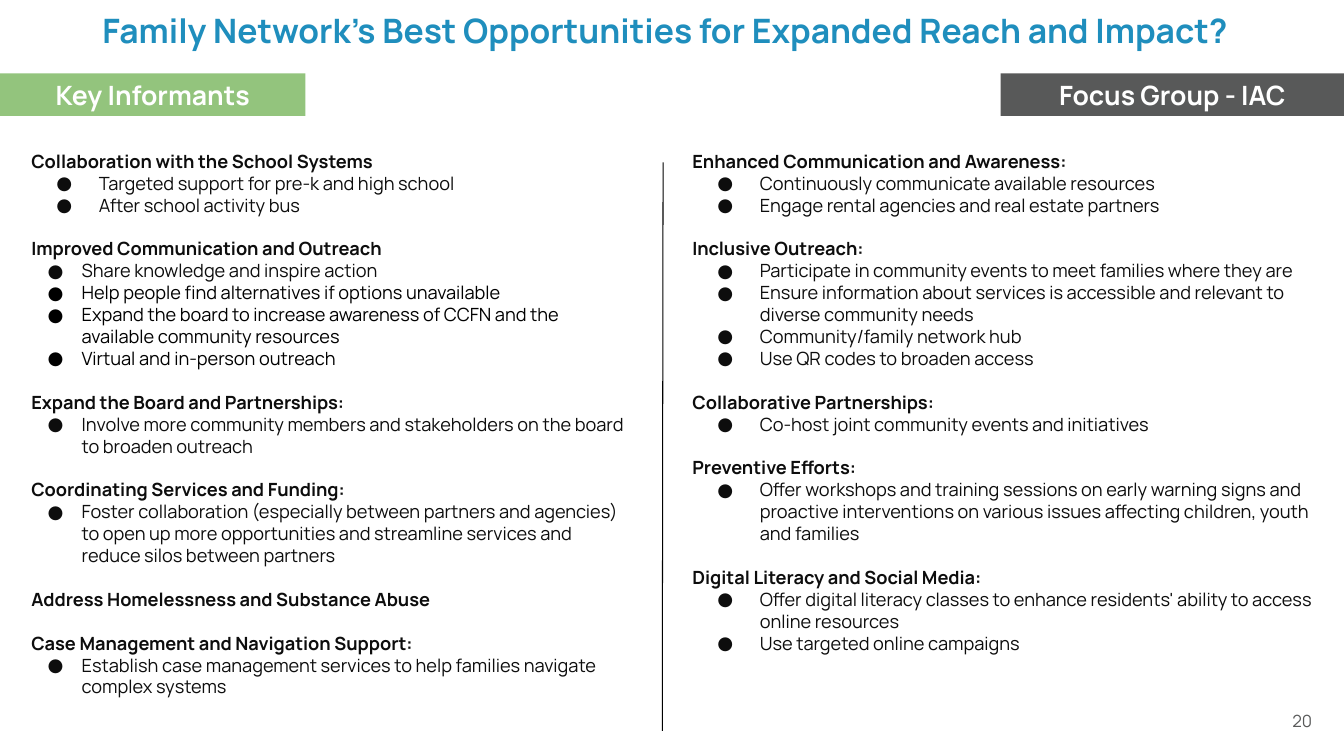
from lxml import etree
from pptx import Presentation
from pptx.dml.color import RGBColor
from pptx.enum.shapes import MSO_CONNECTOR, MSO_SHAPE
from pptx.enum.text import MSO_ANCHOR, MSO_AUTO_SIZE, PP_ALIGN
from pptx.oxml.ns import qn
from pptx.util import Cm, Pt

STRAIGHT, RECTANGLE = MSO_CONNECTOR.STRAIGHT, MSO_SHAPE.RECTANGLE
TOP, MIDDLE = MSO_ANCHOR.TOP, MSO_ANCHOR.MIDDLE
LEFT, CENTER, RIGHT = PP_ALIGN.LEFT, PP_ALIGN.CENTER, PP_ALIGN.RIGHT
NO_FIT = MSO_AUTO_SIZE.NONE

TITLE_ONLY = 5
FONT = "Manrope"
LINE_PITCH = Pt(15.65)
COLOURS = {
    "blue": "1F8EBD",
    "green": "93C47D",
    "grey": "585959",
    "white": "FFFFFF",
    "ink": "0D0D0D",
    "black": "000000",
}
BULLETS = {
    "wide": {"colour": "ink", "margin": 1.7, "hang": 1.07},
    "narrow": {"colour": "ink", "margin": 1.27, "hang": 0.86},
    "black": {"colour": "black", "margin": 1.27, "hang": 0.86},
}
KEY_INFORMANTS = [
    ("heading", "Collaboration with the School Systems"),
    ("wide", "Targeted support for pre-k and high school"),
    ("wide", "After school activity bus"),
    ("heading", "Improved Communication and Outreach"),
    ("narrow", "Share knowledge and inspire action"),
    ("black", "Help people find alternatives if options unavailable"),
    ("black", "Expand the board to increase awareness of CCFN and the "
              "available community resources"),
    ("black", "Virtual and in-person outreach"),
    ("heading", "Expand the Board and Partnerships:"),
    ("narrow", "Involve more community members and stakeholders on the board "
               "to broaden outreach"),
    ("heading", "Coordinating Services and Funding:"),
    ("narrow", "Foster collaboration (especially between partners and agencies) "
               "to open up more opportunities and streamline services and "
               "reduce silos between partners"),
    ("heading", "Address Homelessness and Substance Abuse"),
    ("heading", "Case Management and Navigation Support:"),
    ("narrow", "Establish case management services to help families navigate "
               "complex systems"),
]
FOCUS_GROUP = [
    ("heading", "Enhanced Communication and Awareness:"),
    ("wide", "Continuously communicate available resources"),
    ("wide", "Engage rental agencies and real estate partners"),
    ("heading", "Inclusive Outreach:"),
    ("wide", "Participate in community events to meet families where they are"),
    ("wide", "Ensure information about services is accessible and relevant to "
             "diverse community needs"),
    ("wide", "Community/family network hub"),
    ("wide", "Use QR codes to broaden access"),
    ("heading", "Collaborative Partnerships:"),
    ("wide", "Co-host joint community events and initiatives"),
    ("heading", "Preventive Efforts:"),
    ("wide", "Offer workshops and training sessions on early warning signs and "
             "proactive interventions on various issues affecting children, youth "
             "and families"),
    ("heading", "Digital Literacy and Social Media:"),
    ("wide", "Offer digital literacy classes to enhance residents' ability to "
             "access online resources"),
    ("wide", "Use targeted online campaigns"),
]


def rgb(name):
    """Return the named colour."""
    return RGBColor.from_string(COLOURS[name])


def set_values(target, **values):
    """Set each given attribute on the target."""
    for name, value in values.items():
        setattr(target, name, value)


def set_frame(box, anchor=TOP, insets=(0.25, 0.13, 0.25, 0.13)):
    """Set wrapping, anchor and insets, and return the text frame."""
    left, top, right, bottom = map(Cm, insets)
    frame = box.text_frame
    set_values(frame, word_wrap=True, auto_size=NO_FIT, vertical_anchor=anchor,
               margin_left=left, margin_top=top,
               margin_right=right, margin_bottom=bottom)
    return frame


def write(para, text, size, colour, bold=False, align=LEFT):
    """Put one formatted span in a paragraph."""
    para.alignment = align
    span = para.add_run()
    span.text = text
    set_values(span.font, name=FONT, size=Pt(size), bold=bold)
    span.font.color.rgb = rgb(colour)


def add_bullet(para, colour, margin, hang):
    """Give a paragraph a coloured round bullet and a hanging indent."""
    properties = para._p.get_or_add_pPr()
    properties.set("marL", str(Cm(margin)))
    properties.set("indent", str(-Cm(hang)))
    bullet_colour = etree.SubElement(properties, qn("a:buClr"))
    etree.SubElement(bullet_colour, qn("a:srgbClr"), val=COLOURS[colour])
    etree.SubElement(properties, qn("a:buFont"), typeface=FONT)
    etree.SubElement(properties, qn("a:buChar"), char="●")


def set_title(page, text):
    """Place and format the title."""
    title = page.shapes.title
    set_values(title, left=Cm(0.46), top=Cm(0.23), width=Cm(32.94), height=Cm(1.07))
    frame = set_frame(title, insets=(0, 0.03, 0.34, 0))
    write(frame.paragraphs[0], text, 24, "blue", True, CENTER)


def add_label(page, left, width, text, fill):
    """Add a filled column label."""
    label = page.shapes.add_shape(RECTANGLE, Cm(left), Cm(1.85), Cm(width), Cm(1.07))
    label.shadow.inherit = False
    label.fill.solid()
    label.fill.fore_color.rgb = rgb(fill)
    label.line.fill.background()
    frame = set_frame(label, MIDDLE)
    write(frame.paragraphs[0], text, 19, "white", True, CENTER)


def add_column(page, left, width, height, entries):
    """Add a column of headings and bulleted points."""
    box = page.shapes.add_textbox(Cm(left), Cm(3.45), Cm(width), Cm(height))
    frame = set_frame(box, insets=(0.33,) * 4)
    for index, (kind, text) in enumerate(entries):
        para = frame.add_paragraph() if index else frame.paragraphs[0]
        heading = kind == "heading"
        if not heading:
            add_bullet(para, **BULLETS[kind])
        gap = LINE_PITCH if heading and index else Pt(0)
        set_values(para, line_spacing=LINE_PITCH, space_before=gap)
        write(para, text, 13, "ink" if heading else BULLETS[kind]["colour"], heading)


def add_divider(page):
    """Add the thin line between the columns."""
    divider = page.shapes.add_connector(
        STRAIGHT, Cm(16.71), Cm(4.09), Cm(16.69), Cm(18.42))
    divider.line.color.rgb = rgb("black")
    divider.line.width = Pt(0.75)
    etree.SubElement(divider._element.spPr, qn("a:effectLst"))


def add_page_number(page, number):
    """Add the page number at the lower right."""
    box = page.shapes.add_textbox(Cm(25.7), Cm(17.65), Cm(7.62), Cm(1.02))
    frame = set_frame(box, MIDDLE)
    write(frame.paragraphs[0], number, 12, "grey", align=RIGHT)


def main():
    """Build and save the slide."""
    deck = Presentation()
    set_values(deck, slide_width=Cm(33.87), slide_height=Cm(19.05))
    page = deck.slides.add_slide(deck.slide_layouts[TITLE_ONLY])
    set_title(page, "Family Network’s Best Opportunities for Expanded Reach and Impact?")
    add_column(page, 0.46, 15.8, 15.21, KEY_INFORMANTS)
    add_divider(page)
    add_label(page, 0, 7.7, "Key Informants", "green")
    add_label(page, 25.22, 8.65, "Focus Group - IAC", "grey")
    add_column(page, 17.12, 16.75, 14.02, FOCUS_GROUP)
    add_page_number(page, "20")
    deck.save("out.pptx")


if __name__ == "__main__":
    main()
